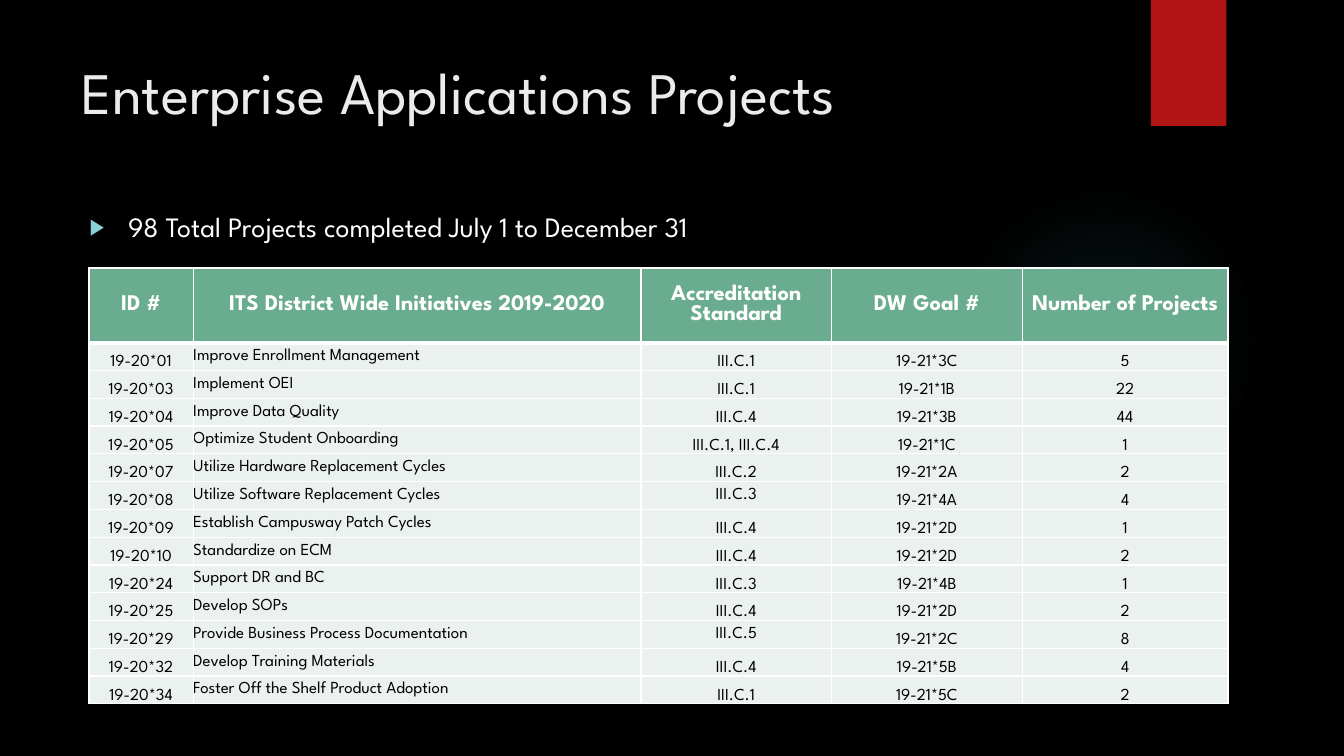
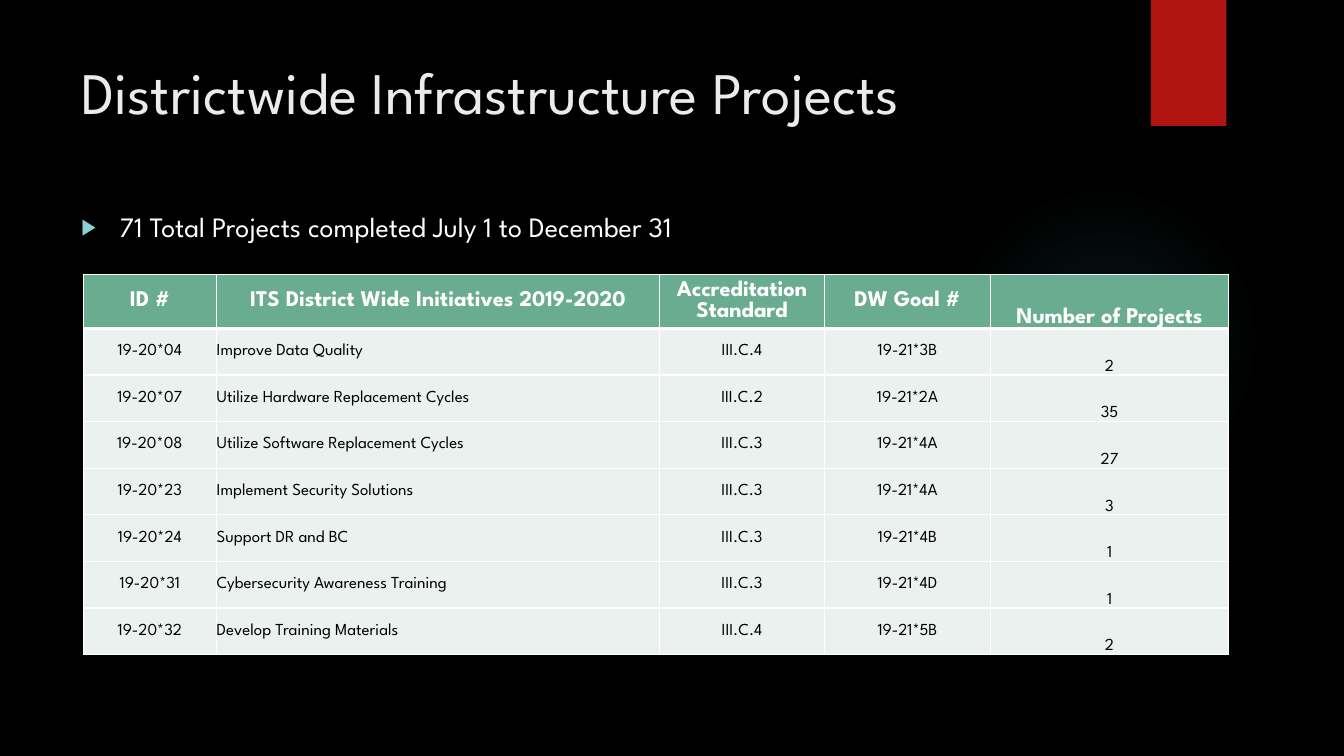
"""Build two slides listing completed projects per district wide initiative."""
from lxml import etree
from pptx import Presentation
from pptx.dml.color import RGBColor
from pptx.enum import shapes, text
from pptx.oxml import ns
from pptx import util as u

FONT = "League Spartan"
BLACK, WHITE, TITLE = "000000", "FFFFFF", "EBEBEB"
RED, GLOW, ARROW = "B01513", "50B9C1", "8AD0D6"
HEADER, BODY = "6AAC90", "EBF1EE"
MIDDLE, BOTTOM = text.MSO_ANCHOR.MIDDLE, text.MSO_ANCHOR.BOTTOM
COLUMNS, ROWS = 160, 90

HEADINGS = ["ID #", "ITS District Wide Initiatives 2019-2020",
            "Accreditation Standard", "DW Goal #", "Number of Projects"]

SLIDES = [
    {
        "title": "Enterprise Applications Projects",
        "summary": "98 Total Projects completed July 1 to December 31",
        "summary_left": 9.5,
        "corner": (10.6, 31.9),
        "widths": [12.4, 53.3, 22.7, 22.7, 24.5],
        "header_height": 8.9,
        "row_height": 3.31,
        "header_anchors": [MIDDLE] * 5,
        "body_anchors": [BOTTOM, MIDDLE, BOTTOM, BOTTOM, BOTTOM],
        "raised_cells": {(6, 2), (11, 2)},
        "projects": [
            ("19-20*01", "Improve Enrollment Management", "III.C.1", "19-21*3C", 5),
            ("19-20*03", "Implement OEI", "III.C.1", "19-21*1B", 22),
            ("19-20*04", "Improve Data Quality", "III.C.4", "19-21*3B", 44),
            ("19-20*05", "Optimize Student Onboarding", "III.C.1, III.C.4", "19-21*1C", 1),
            ("19-20*07", "Utilize Hardware Replacement Cycles", "III.C.2", "19-21*2A", 2),
            ("19-20*08", "Utilize Software Replacement Cycles", "III.C.3", "19-21*4A", 4),
            ("19-20*09", "Establish Campusway Patch Cycles", "III.C.4", "19-21*2D", 1),
            ("19-20*10", "Standardize on ECM", "III.C.4", "19-21*2D", 2),
            ("19-20*24", "Support DR and BC", "III.C.3", "19-21*4B", 1),
            ("19-20*25", "Develop SOPs", "III.C.4", "19-21*2D", 2),
            ("19-20*29", "Provide Business Process Documentation", "III.C.5", "19-21*2C", 8),
            ("19-20*32", "Develop Training Materials", "III.C.4", "19-21*5B", 4),
            ("19-20*34", "Foster Off the Shelf Product Adoption", "III.C.1", "19-21*5C", 2),
        ],
    },
    {
        "title": "Districtwide Infrastructure Projects",
        "summary": "71 Total Projects completed July 1 to December 31",
        "summary_left": 8.5,
        "corner": (9.9, 32.7),
        "widths": [15.9, 52.7, 19.7, 19.7, 28.4],
        "header_height": 5.55,
        "row_height": 5.55,
        "header_anchors": [MIDDLE] * 4 + [BOTTOM],
        "body_anchors": [MIDDLE] * 4 + [BOTTOM],
        "raised_cells": set(),
        "projects": [
            ("19-20*04", "Improve Data Quality", "III.C.4", "19-21*3B", 2),
            ("19-20*07", "Utilize Hardware Replacement Cycles", "III.C.2", "19-21*2A", 35),
            ("19-20*08", "Utilize Software Replacement Cycles", "III.C.3", "19-21*4A", 27),
            ("19-20*23", "Implement Security Solutions", "III.C.3", "19-21*4A", 3),
            ("19-20*24", "Support DR and BC", "III.C.3", "19-21*4B", 1),
            ("19-20*31", "Cybersecurity Awareness Training", "III.C.3", "19-21*4D", 1),
            ("19-20*32", "Develop Training Materials", "III.C.4", "19-21*5B", 2),
        ],
    },
]

deck = Presentation()
deck.slide_width, deck.slide_height = u.Inches(13.33), u.Inches(7.5)


def grid(left, top, width, height):
    """Turn grid columns and rows into slide lengths."""
    column, row = deck.slide_width / COLUMNS, deck.slide_height / ROWS
    return [u.Emu(round(n * unit)) for n, unit in
            zip((left, top, width, height), (column, row, column, row))]


def paint(target, colour, size=None, bold=None):
    """Colour a fill, or style a font when a size is given."""
    if size is None:
        target.solid()
        target.fore_color.rgb = RGBColor.from_string(colour)
    else:
        target.name, target.size, target.bold = FONT, u.Pt(size), bold
        target.color.rgb = RGBColor.from_string(colour)


NAMESPACE = ns.nsdecls("a")
STOPS = "".join(
    f'<a:gs pos="{place}000"><a:srgbClr val="{GLOW}"><a:alpha val="{alpha}000"/>'
    "</a:srgbClr></a:gs>" for place, alpha in ((0, 7), (36, 6), (69, 0)))
GLOW_FILL = (
    f'<a:gradFill {NAMESPACE}><a:gsLst>{STOPS}</a:gsLst><a:path path="circle">'
    '<a:fillToRect l="50000" t="50000" r="50000" b="50000"/></a:path></a:gradFill>')
TAB_SHADOW = (
    f'<a:outerShdw {NAMESPACE} blurRad="{u.Pt(3)}" dist="{u.Pt(2)}" dir="5400000">'
    f'<a:srgbClr val="{BLACK}"><a:alpha val="45000"/></a:srgbClr></a:outerShdw>')
BULLET = [
    f'<a:buClr {NAMESPACE}><a:srgbClr val="{ARROW}"/></a:buClr>',
    f'<a:buSzPct {NAMESPACE} val="80000"/>',
    f'<a:buFont {NAMESPACE} typeface="Arial"/>',
    f'<a:buChar {NAMESPACE} char="▶"/>',
]

for content in SLIDES:
    page = deck.slides.add_slide(deck.slide_layouts[6])
    paint(page.background.fill, BLACK)

    glow = page.shapes.add_shape(shapes.MSO_SHAPE.OVAL, *grid(113, 22, 37, 37))
    glow.shadow.inherit = False
    glow.line.fill.background()
    glow._element.spPr.find(ns.qn("a:prstGeom")).addnext(etree.fromstring(GLOW_FILL))

    tab = page.shapes.add_shape(shapes.MSO_SHAPE.RECTANGLE, *grid(137, 0, 9, 15))
    tab.shadow.inherit = False
    paint(tab.fill, RED)
    tab.line.fill.background()
    tab._element.spPr.find(ns.qn("a:effectLst")).append(etree.fromstring(TAB_SHADOW))

    title = page.shapes.add_textbox(*grid(8.5, 6, 123.5, 18.4))
    title.text_frame.word_wrap = True
    para = title.text_frame.paragraphs[0]
    para.text = content["title"]
    paint(para.font, TITLE, 42)

    summary = page.shapes.add_textbox(*grid(content["summary_left"], 24.4, 117.4, 7))
    summary.text_frame.word_wrap = True
    para = summary.text_frame.paragraphs[0]
    para.text = content["summary"]
    properties = para._p.get_or_add_pPr()
    properties.set("marL", str(u.Inches(0.38)))
    properties.set("indent", str(u.Inches(-0.38)))
    for element in BULLET:
        properties.append(etree.fromstring(element))
    paint(para.font, WHITE, 20)

    records = [HEADINGS] + content["projects"]
    heights = [content["header_height"]] + [content["row_height"]] * len(content["projects"])
    area = grid(*content["corner"], sum(content["widths"]), sum(heights))
    table = page.shapes.add_table(len(records), len(HEADINGS), *area).table
    table.horz_banding = False
    for column, width in zip(table.columns, content["widths"]):
        column.width = grid(0, 0, width, 0)[2]

    for r, record in enumerate(records):
        table.rows[r].height = grid(0, 0, 0, heights[r])[3]
        heading = r == 0
        anchors = content["header_anchors" if heading else "body_anchors"]
        for c, value in enumerate(record):
            cell = table.cell(r, c)
            cell.margin_left = cell.margin_right = cell.margin_top = cell.margin_bottom = 0
            cell.vertical_anchor = MIDDLE if (r, c) in content["raised_cells"] else anchors[c]
            for side in "LRTB":
                thick = (heading and side == "B") or (r == 1 and side == "T")
                cell._tc.get_or_add_tcPr().append(etree.fromstring(
                    f'<a:ln{side} {NAMESPACE} w="{u.Pt(3 if thick else 1)}"><a:solidFill>'
                    f'<a:srgbClr val="{WHITE}"/></a:solidFill></a:ln{side}>'))
            paint(cell.fill, HEADER if heading else BODY)
            para = cell.text_frame.paragraphs[0]
            para.text = str(value)
            left = c == 1 and not heading
            para.alignment = text.PP_ALIGN.LEFT if left else text.PP_ALIGN.CENTER
            paint(para.font, WHITE if heading else BLACK, 16 if heading else 12, heading)

deck.save("out.pptx")
